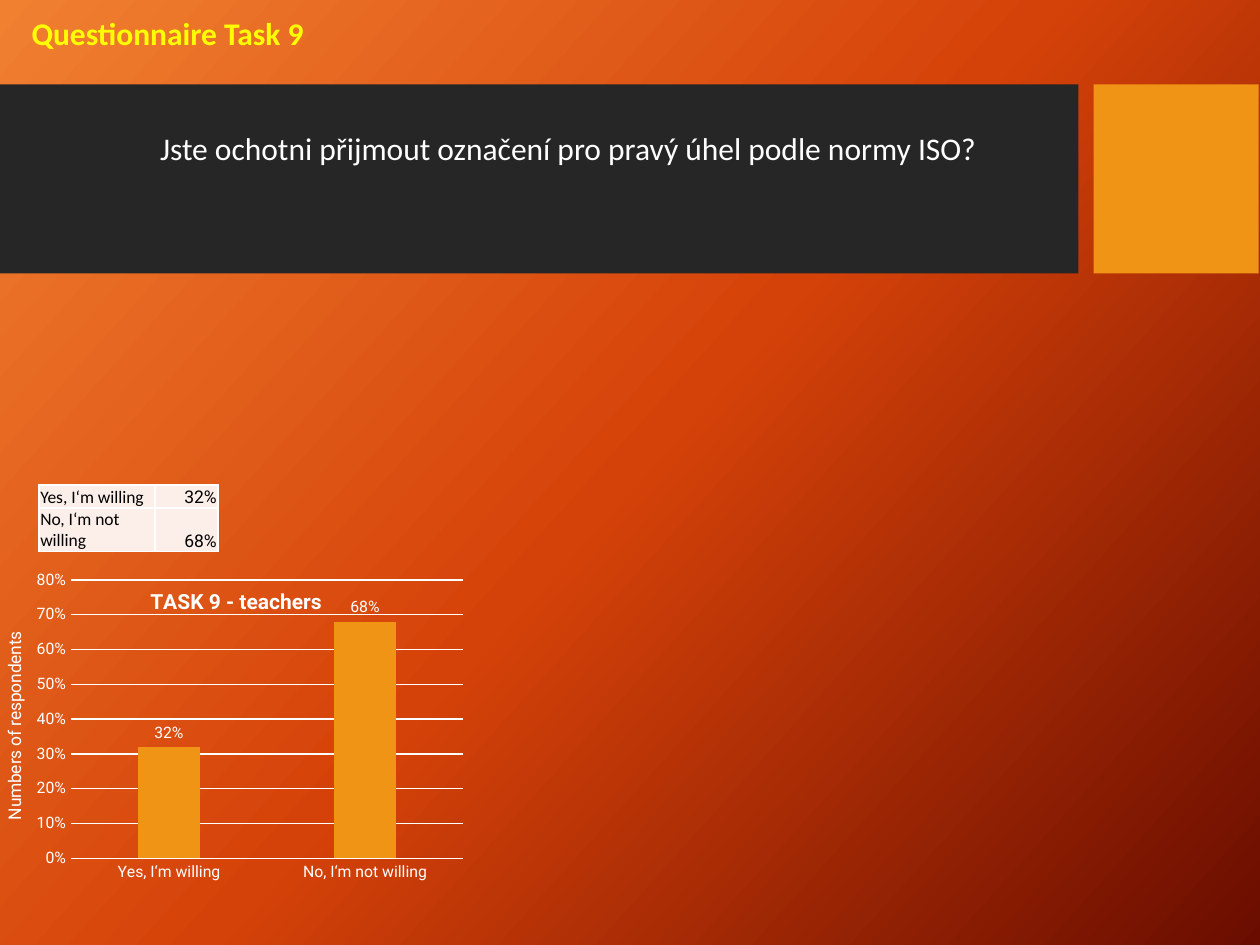
from copy import deepcopy

from lxml import etree
from pptx import Presentation
from pptx.chart.data import CategoryChartData
from pptx.dml.color import RGBColor
from pptx.enum.chart import XL_CHART_TYPE as Kind, XL_LABEL_POSITION as Spot, XL_TICK_MARK as Tick
from pptx.enum.shapes import MSO_SHAPE as Shape
from pptx.enum.text import MSO_ANCHOR as Anchor, MSO_AUTO_SIZE as Fit, PP_ALIGN as Align
from pptx.oxml import parse_xml
from pptx.oxml.ns import nsdecls, qn
from pptx.util import Inches, Pt

WHITE, AMBER = "FFFFFF", "F09415"
ROWS = [("Yes, I‘m willing", 0.32), ("No, I‘m not willing", 0.68)]


def tint(code):
    return RGBColor.from_string(code)


def style(font, size, color=WHITE, name="Roboto", bold=False):
    font.size, font.name, font.bold = Pt(size), name, bold
    font.color.rgb = tint(color)


def paint(slide, stops, angle):
    fill = slide.background.fill
    fill.gradient()
    fill.gradient_angle = 360 - angle
    group = slide.element.find(".//" + qn("a:gsLst"))
    group.insert(1, deepcopy(group[0]))
    for stop, (place, color) in zip(fill.gradient_stops, stops):
        stop.position = place
        stop.color.rgb = tint(color)


def block(slide, left, width, color):
    shape = slide.shapes.add_shape(Shape.RECTANGLE, Inches(left), Inches(0.67), Inches(width), Inches(1.5))
    shape.shadow.inherit = False
    shape.fill.solid()
    shape.fill.fore_color.rgb = tint(color)
    shape.line.fill.background()


def head(slide, label, query):
    title = slide.shapes.title
    title.left, title.top = Inches(0.15), Inches(0.06)
    title.width, title.height = Inches(8.2), Inches(2.22)
    slide.shapes._spTree.append(title._element)
    frame = title.text_frame
    frame.auto_size, frame.vertical_anchor = Fit.NONE, Anchor.TOP
    frame.text = f"{label}\n{query}"
    first, last = frame.paragraphs
    for para, color in ((first, "FFFF00"), (last, WHITE)):
        para.alignment = Align.LEFT
        style(para.font, 18, color, "Calibri", para is first)
    last.space_before = Pt(44)
    last._p.get_or_add_pPr().set("marL", str(Inches(1.02)))


def edge(cell):
    props = cell._tc.get_or_add_tcPr()
    for spot, side in enumerate(("lnL", "lnR", "lnT", "lnB")):
        props.insert(spot, parse_xml(
            f'<a:{side} {nsdecls("a")} w="{Pt(1)}"><a:solidFill>'
            f'<a:srgbClr val="{WHITE}"/></a:solidFill></a:{side}>'))


def entry(cell, text, name, align):
    cell.text = text
    cell.vertical_anchor = Anchor.BOTTOM
    cell.margin_left = cell.margin_right = cell.margin_top = Inches(0.01)
    cell.margin_bottom = 0
    cell.fill.solid()
    cell.fill.fore_color.rgb = tint("FCEEE8")
    para = cell.text_frame.paragraphs[0]
    para.alignment = align
    style(para.font, 10, "000000", name)
    edge(cell)


def grid(slide):
    table = slide.shapes.add_table(
        len(ROWS), 2, Inches(0.31), Inches(3.85), Inches(1.42), Inches(0.36)).table
    table.columns[0].width, table.columns[1].width = Inches(0.92), Inches(0.5)
    for row, (label, share) in enumerate(ROWS):
        table.rows[row].height = Inches(0.18)
        entry(table.cell(row, 0), label, "Calibri", Align.LEFT)
        entry(table.cell(row, 1), f"{share:.0%}", "Roboto", Align.RIGHT)


def place(host, after, **spots):
    old = host.find(qn("c:layout"))
    if old is not None:
        host.remove(old)
    layout = etree.Element(qn("c:layout"))
    manual = etree.SubElement(layout, qn("c:manualLayout"))
    for tag, value in spots.items():
        etree.SubElement(manual, qn(f"c:{tag}")).set("val", str(value))
    host.insert(after, layout)


def caption(owner, text, size, bold=False):
    frame = owner.text_frame
    frame.text = text
    style(frame.paragraphs[0].font, size, bold=bold)


def rule(line):
    line.color.rgb = tint(WHITE)
    line.width = Pt(0.75)


def axes(chart):
    base, scale = chart.category_axis, chart.value_axis
    for axis in (base, scale):
        axis.major_tick_mark = axis.minor_tick_mark = Tick.NONE
        style(axis.tick_labels.font, 9)
    rule(base.format.line)
    rule(scale.major_gridlines.format.line)
    scale.format.line.fill.background()
    scale.minimum_scale, scale.maximum_scale, scale.major_unit = 0, 0.8, 0.1
    scale.tick_labels.number_format = "0%"
    scale.tick_labels.number_format_is_linked = False
    caption(scale.axis_title, "Numbers of respondents", 10)


def bars(chart):
    plot = chart.plots[0]
    plot.gap_width, plot.overlap, plot.vary_by_categories = 219, -27, False
    fill = plot.series[0].format.fill
    fill.solid()
    fill.fore_color.rgb = tint(AMBER)
    plot.has_data_labels = True
    labels = plot.data_labels
    labels.show_value, labels.position = True, Spot.OUTSIDE_END
    labels.number_format, labels.number_format_is_linked = "0%", False
    style(labels.font, 9)


def graph(slide):
    data = CategoryChartData(number_format="0%")
    data.categories = [label for label, _ in ROWS]
    data.add_series("Series 1", [share for _, share in ROWS])
    chart = slide.shapes.add_chart(
        Kind.COLUMN_CLUSTERED, Inches(0), Inches(4.53), Inches(3.75), Inches(3), data).chart
    style(chart.font, 10)
    chart.has_legend = False
    caption(chart.chart_title, "TASK 9 - teachers", 12, True)
    place(chart.chart_title._element, 1, xMode="edge", yMode="edge", x=0.31, y=0.03)
    area = chart._chartSpace.find(".//" + qn("c:plotArea"))
    place(area, 0, layoutTarget="inner", xMode="edge", yMode="edge", x=0.15, y=0.02, w=0.83, h=0.74)
    axes(chart)
    bars(chart)


def main():
    deck = Presentation()
    deck.slide_width, deck.slide_height = Inches(10), Inches(7.5)
    slide = deck.slides.add_slide(deck.slide_layouts[5])
    paint(slide, [(0, "F18031"), (0.5, "D54209"), (1, "6A0D00")], 42)
    block(slide, 0, 8.56, "262626")
    block(slide, 8.68, 1.31, AMBER)
    head(slide, "Questionnaire Task 9", "Jste ochotni přijmout označení pro pravý úhel podle normy ISO?")
    grid(slide)
    graph(slide)
    deck.save("out.pptx")


if __name__ == "__main__":
    main()
